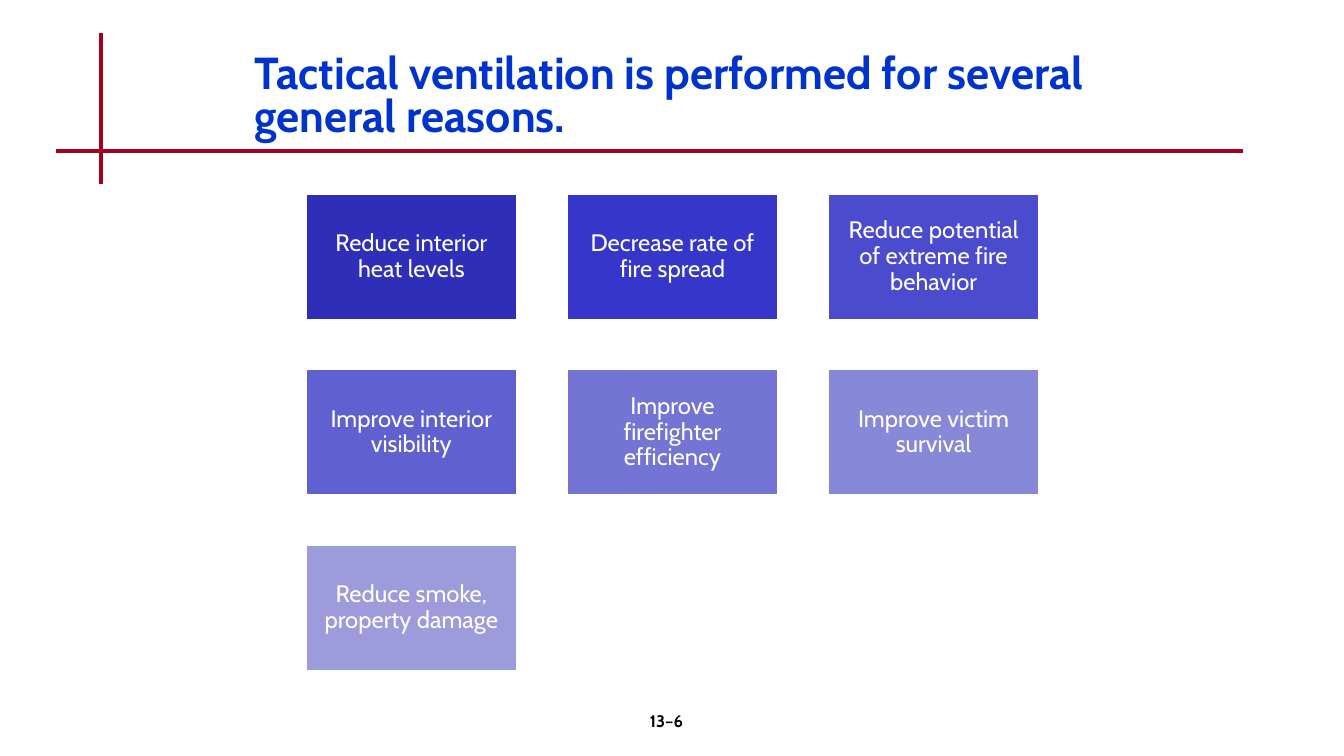
from dataclasses import dataclass

from lxml import etree
from pptx import Presentation
from pptx.dml.color import RGBColor
from pptx.enum import shapes, text
from pptx.oxml import ns
from pptx.util import Inches, Pt


@dataclass(frozen=True)
class Theme:
    font: str = "Cabin"
    title: str = "0033CC"
    rule: str = "A50021"
    white: str = "FFFFFF"
    black: str = "000000"
    title_size: int = 32
    reason_size: int = 17
    number_size: int = 12
    rule_width: int = 3
    border_width: int = 2


@dataclass(frozen=True)
class Rule:
    x1: float
    y1: float
    x2: float
    y2: float


@dataclass(frozen=True)
class Reason:
    words: str
    fill: str


THEME = Theme()

RULES = [Rule(1, 0.33, 1, 1.83), Rule(0.56, 1.5, 12.33, 1.5)]

REASONS = [
    Reason("Reduce interior heat levels", "2E2EB9"),
    Reason("Decrease rate of fire spread", "3636CA"),
    Reason("Reduce potential of extreme fire behavior", "4B4BCD"),
    Reason("Improve interior visibility", "6060D0"),
    Reason("Improve firefighter efficiency", "7474D4"),
    Reason("Improve victim survival", "8888D8"),
    Reason("Reduce smoke, property damage", "9C9CDD"),
]

# Grid of reasons, in inches
COLUMNS = 3
GRID_LEFT, GRID_TOP = 3.03, 1.92
BOX_WIDTH, BOX_HEIGHT = 2.1, 1.26
STEP_X, STEP_Y = 2.59, 1.74
BOX_INSET = 0.13


def write(frame, words: str, size: int, color: str, bold: bool = False,
          align=text.PP_ALIGN.CENTER, anchor=text.MSO_ANCHOR.TOP,
          line_spacing: float = 1.0) -> None:
    frame.word_wrap = True
    frame.auto_size = text.MSO_AUTO_SIZE.NONE
    frame.vertical_anchor = anchor
    para = frame.paragraphs[0]
    para.alignment = align
    para.line_spacing = line_spacing
    para.space_before = Pt(0)
    span = para.add_run()
    span.text = words
    span.font.name = THEME.font
    span.font.size = Pt(size)
    span.font.bold = bold
    span.font.color.rgb = RGBColor.from_string(color)


def draw_rule(page, rule: Rule) -> None:
    line = page.shapes.add_connector(
        shapes.MSO_CONNECTOR.STRAIGHT, Inches(rule.x1), Inches(rule.y1),
        Inches(rule.x2), Inches(rule.y2))
    line.line.color.rgb = RGBColor.from_string(THEME.rule)
    line.line.width = Pt(THEME.rule_width)
    etree.SubElement(line._element.spPr, ns.qn("a:effectLst"))


def draw_reason(page, reason: Reason, index: int) -> None:
    row, column = divmod(index, COLUMNS)
    box = page.shapes.add_shape(
        shapes.MSO_SHAPE.RECTANGLE,
        Inches(GRID_LEFT + column * STEP_X), Inches(GRID_TOP + row * STEP_Y),
        Inches(BOX_WIDTH), Inches(BOX_HEIGHT))
    box.shadow.inherit = False
    box.fill.solid()
    box.fill.fore_color.rgb = RGBColor.from_string(reason.fill)
    box.line.color.rgb = RGBColor.from_string(THEME.white)
    box.line.width = Pt(THEME.border_width)
    frame = box.text_frame
    frame.margin_left = frame.margin_right = Inches(BOX_INSET)
    frame.margin_top = frame.margin_bottom = Inches(BOX_INSET)
    write(frame, reason.words, THEME.reason_size, THEME.white,
          anchor=text.MSO_ANCHOR.MIDDLE, line_spacing=0.9)


def main() -> None:
    deck = Presentation()
    deck.slide_width, deck.slide_height = Inches(13.33), Inches(7.5)
    page = deck.slides.add_slide(deck.slide_layouts[5])

    # Crossed rules
    for rule in RULES:
        draw_rule(page, rule)

    # Title
    title = page.shapes.title
    title.left, title.top = Inches(2.42), Inches(0.5)
    title.width, title.height = Inches(8.5), Inches(1)
    write(title.text_frame,
          "Tactical ventilation is performed for several general reasons.",
          THEME.title_size, THEME.title, bold=True,
          align=text.PP_ALIGN.LEFT, line_spacing=0.8)

    # Page number
    number = page.shapes.add_textbox(
        Inches(5.22), Inches(7), Inches(2.78), Inches(0.5))
    write(number.text_frame, "13–6", THEME.number_size, THEME.black, bold=True)

    # Reasons
    for index, reason in enumerate(REASONS):
        draw_reason(page, reason, index)

    deck.save("out.pptx")


if __name__ == "__main__":
    main()
